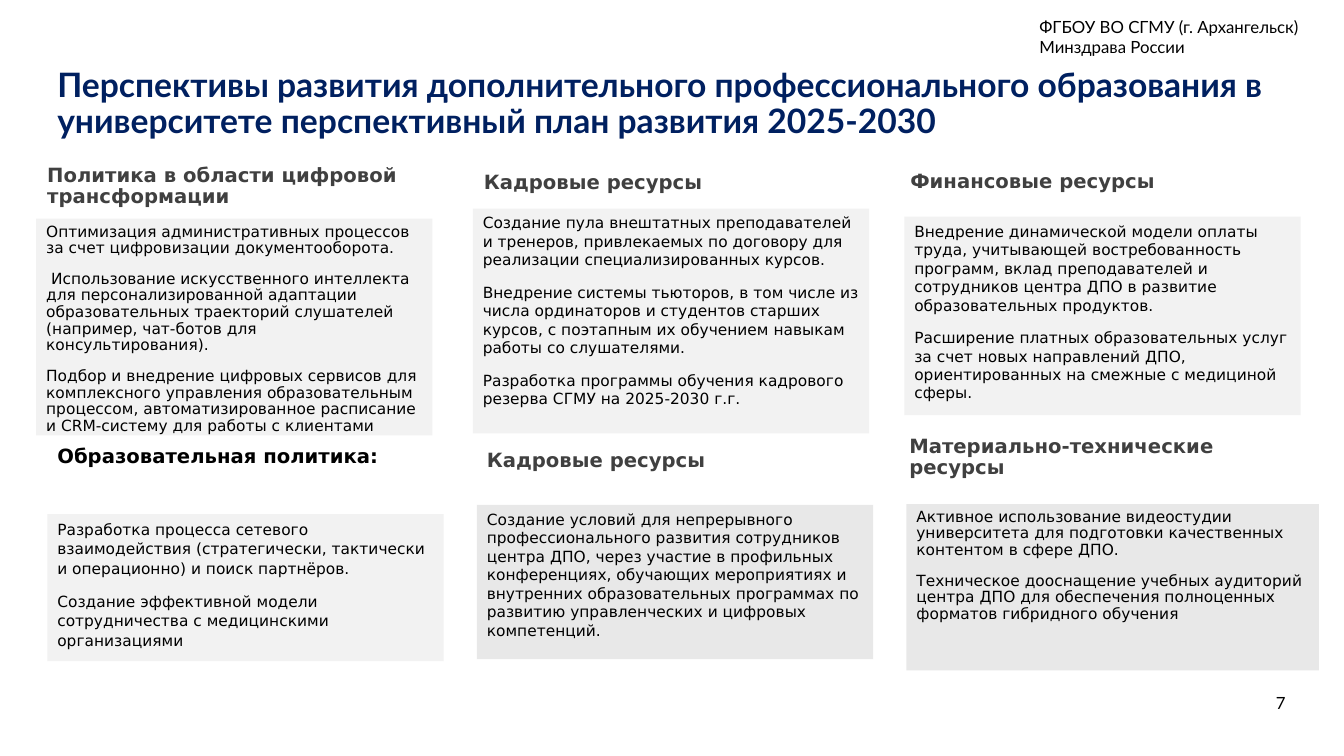
from pptx import Presentation
from pptx import util as u
from pptx.dml.color import RGBColor
from pptx.enum import shapes, text

Inches, Pt = u.Inches, u.Pt
COLORS = {"black": "000000", "navy": "002060", "gray": "404040",
          "light": "F2F2F2", "medium": "E8E8E8"}
BODY = {"name": "DejaVu Sans", "size": Pt(11)}
HEADING = {"name": "DejaVu Sans", "size": Pt(14), "bold": True}
LABEL = {"name": "Lato", "size": Pt(12)}
TITLE = {"name": "Lato", "size": Pt(24), "bold": True}

presentation = Presentation()
presentation.slide_width, presentation.slide_height = Inches(13.33), Inches(7.5)
slide = presentation.slides.add_slide(presentation.slide_layouts[6])


def add_text(box, lines, font, color="black", fill=None, spacing=1.0, gap=10):
    """Add a text box, or a filled rectangle when fill is given."""
    place = [Inches(value) for value in box]
    if fill:
        shape = slide.shapes.add_shape(shapes.MSO_SHAPE.RECTANGLE, *place)
        shape.shadow.inherit = False
        shape.fill.solid()
        shape.fill.fore_color.rgb = RGBColor.from_string(COLORS[fill])
        shape.line.fill.background()
    else:
        shape = slide.shapes.add_textbox(*place)
    frame = shape.text_frame
    frame.word_wrap = True
    frame.vertical_anchor = text.MSO_ANCHOR.TOP
    frame.text = "\n".join(lines)
    for index, paragraph in enumerate(frame.paragraphs):
        paragraph.alignment = text.PP_ALIGN.LEFT
        paragraph.line_spacing = spacing
        paragraph.space_before = Pt(gap if index else 0)
        for name, value in font.items():
            setattr(paragraph.font, name, value)
        paragraph.font.color.rgb = RGBColor.from_string(COLORS[color])
    return shape


organization = add_text(
    (10.21, 0.12, 2.82, 0.5),
    ["ФГБОУ ВО СГМУ (г. Архангельск)", "Минздрава России"], LABEL, gap=0)
organization.text_frame.word_wrap = False

title = add_text(
    (0.47, 0.68, 12.37, 0.6),
    ["Перспективы развития дополнительного профессионального образования "
     "в университете перспективный план развития 2025-2030"],
    TITLE, "navy", spacing=0.9)
title.text_frame.margin_top = 0

page_number = add_text((10.36, 6.82, 2.49, 0.4), ["7"], LABEL)
page_number.text_frame.paragraphs[0].alignment = text.PP_ALIGN.RIGHT

headings = [
    ((0.37, 1.59, 3.93, 0.5), "Политика в области цифровой трансформации", "gray"),
    ((4.7, 1.66, 3.93, 0.5), "Кадровые ресурсы", "gray"),
    ((8.93, 1.65, 3.93, 0.5), "Финансовые ресурсы", "gray"),
    ((0.47, 4.38, 4.52, 0.52), "Образовательная политика:", "black"),
    ((4.73, 4.42, 3.93, 0.34), "Кадровые ресурсы", "gray"),
    ((8.92, 4.28, 4.16, 0.55), "Материально-технические ресурсы", "gray"),
]
for box, heading, color in headings:
    add_text(box, [heading], HEADING, color, spacing=0.9)

panels = [
    ((0.36, 2.17, 3.93, 2.15), "light", 0.9, [
        "Оптимизация административных процессов за счет цифровизации "
        "документооборота.",
        "Использование искусственного интеллекта для персонализированной "
        "адаптации образовательных траекторий слушателей (например, "
        "чат-ботов для консультирования).",
        "Подбор и внедрение цифровых сервисов для комплексного управления "
        "образовательным процессом, автоматизированное расписание и "
        "CRM-систему для работы с клиентами"]),
    ((4.69, 2.07, 3.93, 2.23), "light", 1.0, [
        "Создание пула внештатных преподавателей и тренеров, привлекаемых "
        "по договору для реализации специализированных курсов.",
        "Внедрение системы тьюторов, в том числе из числа ординаторов и "
        "студентов старших курсов, с поэтапным их обучением навыкам работы "
        "со слушателями.",
        "Разработка программы обучения кадрового резерва СГМУ на "
        "2025-2030 г.г."]),
    ((8.97, 2.15, 3.93, 1.97), "light", 1.0, [
        "Внедрение динамической модели оплаты труда, учитывающей "
        "востребованность программ, вклад преподавателей и сотрудников "
        "центра ДПО в развитие образовательных продуктов.",
        "Расширение платных образовательных услуг за счет новых направлений "
        "ДПО, ориентированных на смежные с медициной сферы."]),
    ((0.47, 5.1, 3.93, 1.46), "light", 1.05, [
        "Разработка процесса сетевого взаимодействия (стратегически, "
        "тактически и операционно) и поиск партнёров.",
        "Создание эффективной модели сотрудничества с медицинскими "
        "организациями"]),
    ((4.73, 5.01, 3.93, 1.53), "medium", 1.0, [
        "Создание условий для непрерывного профессионального развития "
        "сотрудников центра ДПО, через участие в профильных конференциях, "
        "обучающих мероприятиях и внутренних образовательных программах по "
        "развитию управленческих и цифровых компетенций."]),
    ((8.99, 5, 4.09, 1.65), "medium", 0.9, [
        "Активное использование видеостудии университета для подготовки "
        "качественных контентом в сфере ДПО.",
        "Техническое дооснащение учебных аудиторий центра ДПО для "
        "обеспечения полноценных форматов гибридного обучения"]),
]
panel_shapes = [add_text(box, lines, BODY, fill=fill, spacing=spacing)
                for box, fill, spacing, lines in panels]

# The second paragraph of the digital policy panel has a small first-line indent
digital_policy = panel_shapes[0].text_frame.paragraphs[1]
digital_policy._p.get_or_add_pPr().set("indent", str(Inches(0.05)))

presentation.save("out.pptx")
